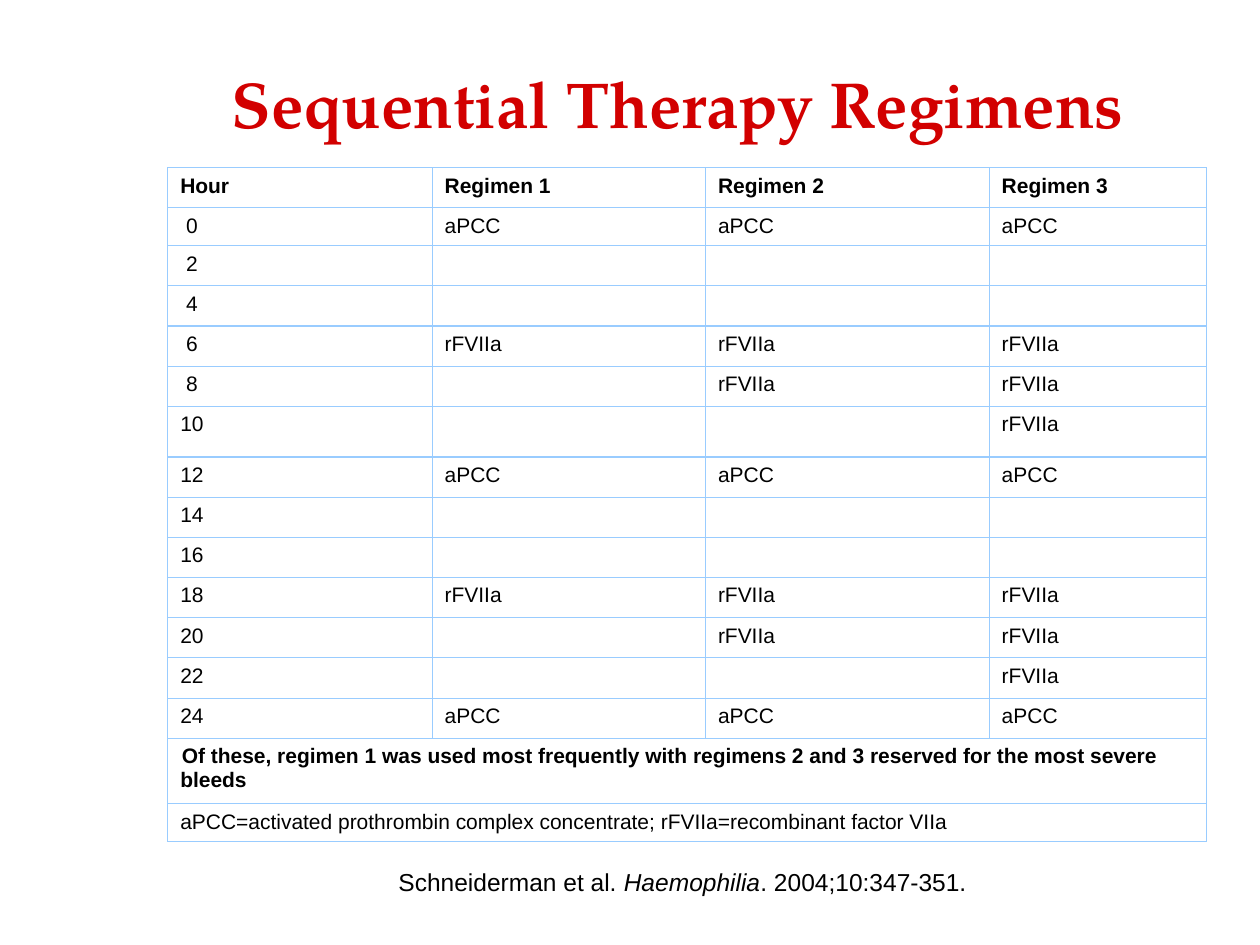
from lxml import etree
from pptx import Presentation
from pptx.dml.color import RGBColor
from pptx.enum.text import MSO_ANCHOR as Anchor, PP_ALIGN as Align
from pptx.oxml import parse_xml
from pptx.oxml.ns import nsdecls, qn
from pptx.util import Cm, Pt


def color(target, value):
    target.solid()
    target.fore_color.rgb = RGBColor.from_string(value)


def add_run(paragraph, text, **formats):
    run = paragraph.add_run()
    run.text = text
    for name, value in ({"name": "Arial", "size": Pt(12), "bold": False} | formats).items():
        setattr(run.font, name, value)
    color(run.font.fill, "000000")
    return run


presentation = Presentation()
presentation.slide_width, presentation.slide_height = Cm(25.4), Cm(19.05)
slide = presentation.slides.add_slide(presentation.slide_layouts[5])

title = slide.shapes.title
title_place = {"left": Cm(3.18), "top": Cm(0.76), "width": Cm(20.96), "height": Cm(2.62)}
for name, value in title_place.items():
    setattr(title, name, value)
title.text_frame.vertical_anchor = Anchor.MIDDLE
paragraph = title.text_frame.paragraphs[0]
paragraph.alignment = Align.CENTER
run = add_run(paragraph, "Sequential Therapy Regimens",
              name="TeX Gyre Pagella", size=Pt(37), bold=True)
color(run.font.fill, "D20000")
shadow = parse_xml(
    f'<a:effectLst {nsdecls("a")}><a:outerShdw dist="25400" dir="2700000">'
    '<a:srgbClr val="000000"/></a:outerShdw></a:effectLst>')
run.font.fill._xPr.find(qn("a:solidFill")).addnext(shadow)

citation = slide.shapes.add_textbox(Cm(3.18), Cm(17.35), Cm(21.16), Cm(1.32))
citation.text_frame.word_wrap = True
paragraph = citation.text_frame.paragraphs[0]
paragraph.alignment = Align.CENTER
for text, italic in (("Schneiderman et al. ", False), ("Haemophilia", True),
                     (". 2004;10:347-351.", False)):
    add_run(paragraph, text, size=Pt(14), italic=italic)

doses = {
    0: ["aPCC"] * 3,
    6: ["rFVIIa"] * 3,
    8: ["", "rFVIIa", "rFVIIa"],
    10: ["", "", "rFVIIa"],
}
rows = [["Hour", "Regimen 1", "Regimen 2", "Regimen 3"]]
for hour in range(0, 26, 2):
    rows.append([str(hour).rjust(2, " "), *doses.get(hour % 12, [""] * 3)])
conclusion = ("Of these, regimen 1 was used most frequently with regimens 2 and 3 "
              "reserved for the most severe bleeds")
abbreviations = "aPCC=activated prothrombin complex concentrate; rFVIIa=recombinant factor VIIa"
rows += [[conclusion, "", "", ""], [abbreviations, "", "", ""]]

table = slide.shapes.add_table(len(rows), 4, Cm(3.38), Cm(3.38), Cm(20.96), Cm(13.59)).table
for column, width in zip(table.columns, (5.33, 5.51, 5.72, 4.39)):
    column.width = Cm(width)
special_heights = {1: 0.76, 6: 1.02, 14: 1.32, 15: 0.76}
for row_index, texts in enumerate(rows):
    table.rows[row_index].height = Cm(special_heights.get(row_index, 0.81))
    for column_index, text in enumerate(texts):
        cell = table.cell(row_index, column_index)
        properties = cell._tc.get_or_add_tcPr()
        for side in ("lnL", "lnR", "lnT", "lnB"):
            properties.append(parse_xml(
                f'<a:{side} {nsdecls("a")} w="9525"><a:solidFill>'
                f'<a:srgbClr val="99CCFF"/></a:solidFill></a:{side}>'))
        color(cell.fill, "FFFFFF")
        paragraph = cell.text_frame.paragraphs[0]
        if not text:
            etree.SubElement(paragraph._p, qn("a:endParaRPr"), sz="1200")
            continue
        margin, indent = (0, Cm(0.03)) if text == conclusion else (Cm(0.97), Cm(-0.97))
        paragraph_properties = paragraph._p.get_or_add_pPr()
        paragraph_properties.set("marL", str(margin))
        paragraph_properties.set("indent", str(indent))
        add_run(paragraph, text, bold=row_index == 0 or text == conclusion)

for row_index in (14, 15):
    table.cell(row_index, 0).merge(table.cell(row_index, 3))

presentation.save("out.pptx")
